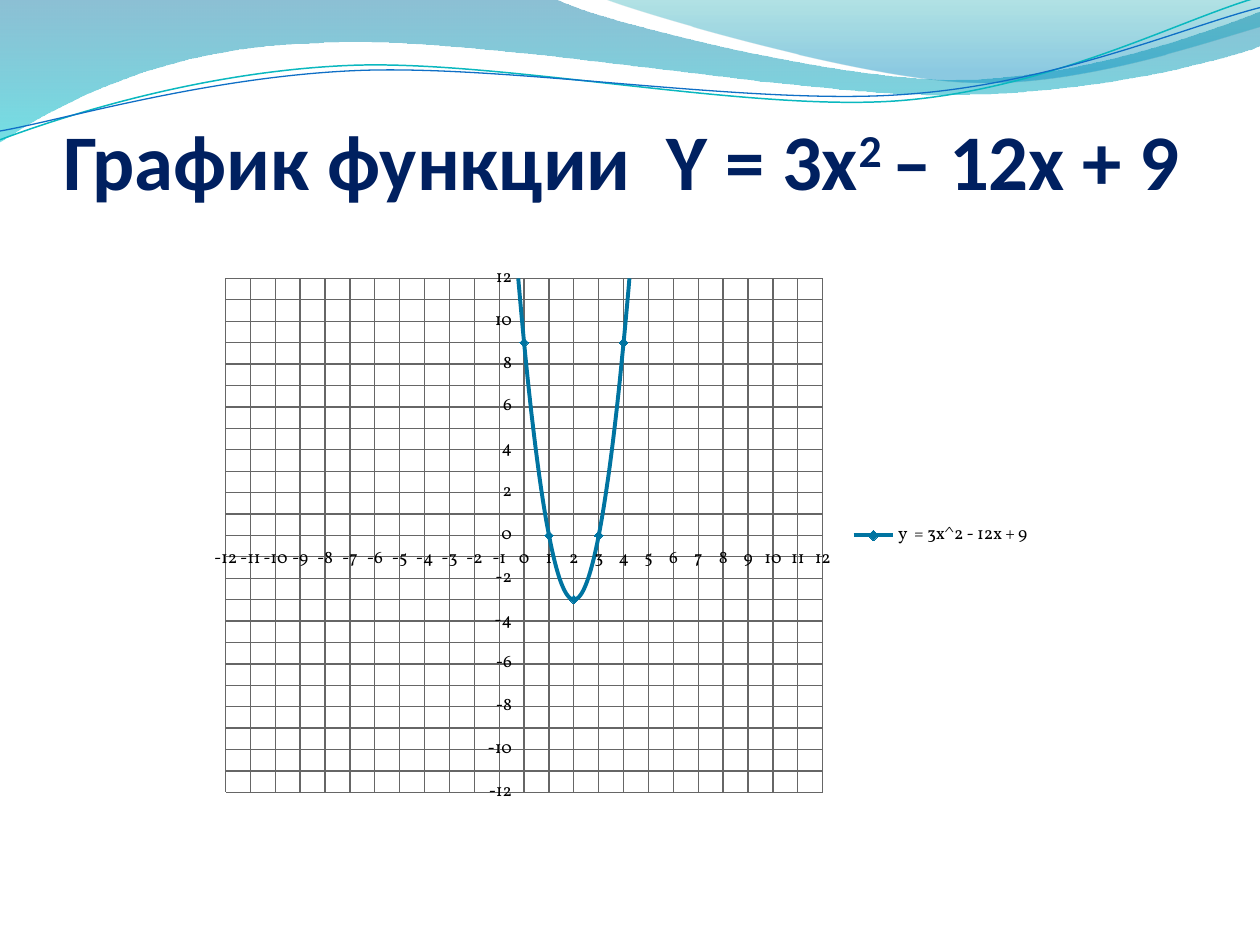
import math

from lxml import etree
from pptx import Presentation
from pptx.chart.data import XyChartData
from pptx.dml.color import RGBColor
from pptx.enum.chart import XL_CHART_TYPE, XL_LEGEND_POSITION, XL_MARKER_STYLE, XL_TICK_MARK
from pptx.enum.text import MSO_ANCHOR, MSO_AUTO_SIZE, PP_ALIGN
from pptx.oxml.ns import qn
from pptx.util import Inches, Pt

NAVY = RGBColor(0x00, 0x20, 0x60)
BLACK = RGBColor(0x00, 0x00, 0x00)
GRID = RGBColor(0x66, 0x66, 0x66)
CURVE = RGBColor(0x00, 0x74, 0xA1)
AQUA = RGBColor(0x00, 0xC6, 0xCF)
TEAL = RGBColor(0x00, 0xA1, 0xA9)
SKY = RGBColor(0x00, 0x8B, 0xBF)
LINE_TEAL = RGBColor(0x0A, 0xB8, 0xBF)
LINE_BLUE = RGBColor(0x0F, 0x6F, 0xC6)
STRAND_ROTATION = 357.3

prs = Presentation()
prs.slide_width, prs.slide_height = Inches(10), Inches(7.5)
slide = prs.slides.add_slide(prs.slide_layouts[5])


def add_wave(box, segments, closed, rotation=0):
    """Draw points (2 numbers) and Bezier curves (6 numbers), given as seen on the slide."""
    left, top, width, height = box
    center_x, center_y = left + width / 2, top + height / 2
    cos, sin = math.cos(math.radians(rotation)), math.sin(math.radians(rotation))

    builder = slide.shapes.build_freeform(Inches(left), Inches(top))
    builder.add_line_segments([(Inches(left + width), Inches(top + height))], close=closed)
    wave = builder.convert_to_shape()
    wave.shadow.inherit = False
    wave.left, wave.top, wave.width, wave.height = map(Inches, box)
    wave.rotation = rotation

    outline = wave._element.find(".//" + qn("a:path"))
    outline.set("w", str(Inches(width)))
    outline.set("h", str(Inches(height)))
    for child in list(outline):
        outline.remove(child)
    for index, segment in enumerate(segments):
        tag = "a:cubicBezTo" if len(segment) == 6 else "a:lnTo" if index else "a:moveTo"
        command = etree.SubElement(outline, qn(tag))
        for x, y in zip(segment[::2], segment[1::2]):
            dx, dy = x - center_x, y - center_y
            point = etree.SubElement(command, qn("a:pt"))
            point.set("x", str(Inches(width / 2 + dx * cos + dy * sin)))
            point.set("y", str(Inches(height / 2 - dx * sin + dy * cos)))
    if closed:
        etree.SubElement(outline, qn("a:close"))
    return wave


# Wave bands: box, path, then (position, colour, opacity in percent) for each stop
bands = [
    ((-0.01, -0.01, 10.02, 1.14),
     [(0, 0), (4.4, -0.01), (4.76, 0.17, 6.64, 0.63, 7.58, 0.63),
      (8.53, 0.63, 9.58, 0.26, 10, 0.09), (10.01, 0.36),
      (9.83, 0.44, 8.7, 0.76, 7.46, 0.75), (6.22, 0.75, 3.82, 0.28, 2.57, 0.34),
      (1.29, 0.36, 0.46, 0.83, -0.01, 1.13), (0, 0)],
     [(0, CURVE, 45), (1, AQUA, 55)]),
    ((4.79, -0.01, 5.21, 0.7),
     [(4.79, -0.01), (5.09, 0.11, 6.82, 0.62, 7.69, 0.65),
      (8.56, 0.69, 9.61, 0.32, 10, 0.21), (10, 0), (4.79, -0.01)],
     [(0, TEAL, 30), (0.8, SKY, 45)]),
]
for box, path, stops in bands:
    band = add_wave(box, path, closed=True)
    band.line.fill.background()
    band.fill.gradient()
    band.fill.gradient_angle = 270
    for stop, (position, color, _) in zip(band.fill.gradient_stops, stops):
        stop.position = position
        stop.color.rgb = color
    for color_node, (_, _, opacity) in zip(band._element.iter(qn("a:srgbClr")), stops):
        etree.SubElement(color_node, qn("a:alpha")).set("val", str(opacity * 1000))

strands = [
    ((-0.02, 0.22, 10.02, 0.71),
     [(0, 1.11), (0.48, 0.93, 1.58, 0.57, 2.77, 0.52),
      (3.95, 0.47, 5.93, 0.89, 7.13, 0.8), (8.33, 0.71, 9.38, 0.15, 9.98, -0.02)],
     LINE_TEAL, 0.85),
    ((-0.02, 0.3, 10.03, 0.58),
     [(0, 1.04), (0.47, 0.96, 1.64, 0.61, 2.83, 0.56),
      (4.03, 0.51, 5.97, 0.84, 7.17, 0.75), (8.36, 0.67, 9.41, 0.21, 10, 0.06)],
     LINE_BLUE, 0.75),
]
for box, path, color, width in strands:
    strand = add_wave(box, path, closed=False, rotation=STRAND_ROTATION)
    strand.fill.background()
    strand.line.color.rgb = color
    strand.line.width = Pt(width)

# Title, in front of the waves
title = slide.shapes.title
slide.shapes._spTree.append(title._element)
title.left, title.top, title.width, title.height = map(Inches, (0.5, 0.39, 9, 1.25))
frame = title.text_frame
frame.auto_size = MSO_AUTO_SIZE.NONE
frame.word_wrap = True
frame.vertical_anchor = MSO_ANCHOR.BOTTOM
frame.margin_left = frame.margin_right = frame.margin_bottom = 0
frame.margin_top = Inches(0.05)
heading = frame.paragraphs[0]
heading.alignment = PP_ALIGN.LEFT
heading.font.name = "Calibri"
heading.font.size = Pt(45)
heading.font.bold = True
heading.font.color.rgb = NAVY
for text, baseline in [("График функции  Y = 3x", 0), ("2 ", 30000), ("– 12x + 9", 0)]:
    run = heading.add_run()
    run.text = text
    if baseline:
        run._r.get_or_add_rPr().set("baseline", str(baseline))

# Parabola
data = XyChartData()
parabola_data = data.add_series("y  = 3x^2 - 12x + 9")
for x in range(-3, 8):
    parabola_data.add_data_point(x, 3 * x * x - 12 * x + 9)
chart_width, chart_height = 6.72, 4.44
chart = slide.shapes.add_chart(
    XL_CHART_TYPE.XY_SCATTER_SMOOTH, Inches(1.56), Inches(2.03),
    Inches(chart_width), Inches(chart_height), data).chart
chart.has_title = False
chart.font.name = "Vollkorn"
chart.font.size = Pt(10)
chart.font.color.rgb = BLACK
chart.has_legend = True
chart.legend.position = XL_LEGEND_POSITION.RIGHT
chart.legend.include_in_layout = False

for axis in (chart.category_axis, chart.value_axis):
    axis.minimum_scale, axis.maximum_scale = -12, 12
    axis.major_unit = 1
    axis.major_tick_mark = XL_TICK_MARK.OUTSIDE
    axis.minor_tick_mark = XL_TICK_MARK.NONE
    axis.has_major_gridlines = True
    for line in (axis.major_gridlines.format.line, axis.format.line):
        line.color.rgb = GRID
        line.width = Pt(0.75)
    axis.tick_labels.number_format = "General"
    axis.tick_labels.number_format_is_linked = False

plot = chart.plots[0]
plot.vary_by_categories = False
parabola = plot.series[0]
parabola.format.line.color.rgb = CURVE
parabola.format.line.width = Pt(2.25)
parabola.marker.style = XL_MARKER_STYLE.DIAMOND
parabola.marker.size = 5
parabola.marker.format.fill.solid()
parabola.marker.format.fill.fore_color.rgb = CURVE
parabola.marker.format.line.color.rgb = CURVE
parabola._element.find(qn("c:smooth")).set("val", "1")

# Fixed plot area, as fractions of the chart
plot_area = chart._chartSpace.find(".//" + qn("c:plotArea"))
for old_layout in plot_area.findall(qn("c:layout")):
    plot_area.remove(old_layout)
layout = etree.Element(qn("c:layout"))
plot_area.insert(0, layout)
manual = etree.SubElement(layout, qn("c:manualLayout"))
for tag, value in [("layoutTarget", "inner"), ("xMode", "edge"), ("yMode", "edge"),
                   ("x", 0.23 / chart_width), ("y", 0.18 / chart_height),
                   ("w", 4.74 / chart_width), ("h", 4.08 / chart_height)]:
    etree.SubElement(manual, qn("c:" + tag)).set("val", str(value))

prs.save("out.pptx")
